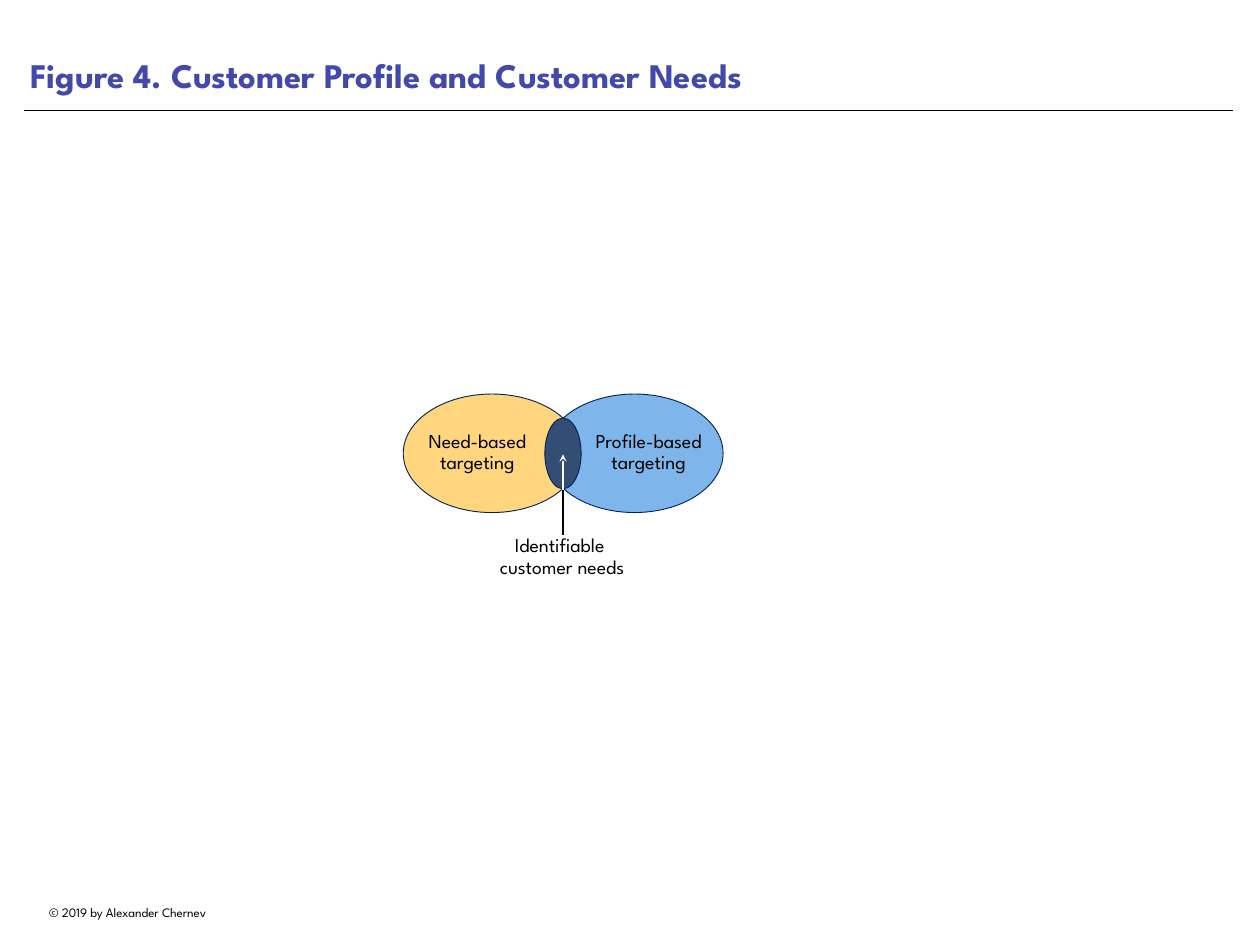
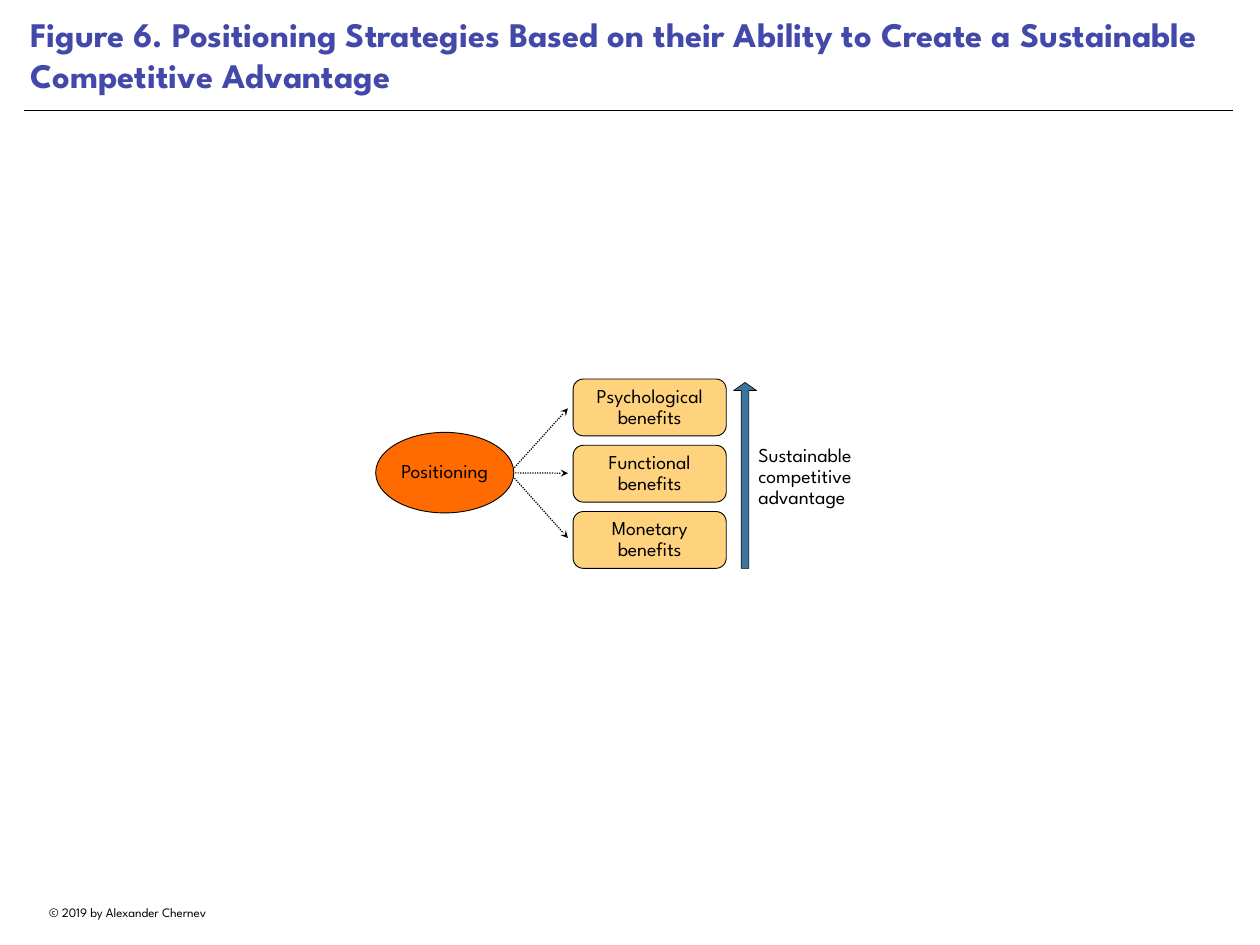
from dataclasses import dataclass

from lxml import etree
from pptx import Presentation
from pptx.dml.color import RGBColor
from pptx.enum.dml import MSO_LINE
from pptx.enum.shapes import MSO_CONNECTOR, MSO_SHAPE
from pptx.enum.text import MSO_ANCHOR, PP_ALIGN
from pptx.oxml.ns import qn
from pptx.shapes.autoshape import Shape
from pptx.slide import Slide
from pptx.util import Cm, Pt

# Enum members
STRAIGHT = MSO_CONNECTOR.STRAIGHT
OVAL, ROUNDED, UP = MSO_SHAPE.OVAL, MSO_SHAPE.ROUNDED_RECTANGLE, MSO_SHAPE.UP_ARROW
TOP, MIDDLE, BOTTOM = MSO_ANCHOR.TOP, MSO_ANCHOR.MIDDLE, MSO_ANCHOR.BOTTOM
LEFT, CENTER = PP_ALIGN.LEFT, PP_ALIGN.CENTER
DOTS = MSO_LINE.ROUND_DOT

# Shared look
FONT = "League Spartan"
BLACK = RGBColor(0x00, 0x00, 0x00)
WHITE = RGBColor(0xFF, 0xFF, 0xFF)
INDIGO = RGBColor(0x43, 0x49, 0xAA)
NAVY = RGBColor(0x00, 0x24, 0x52)
SLATE = RGBColor(0x34, 0x4D, 0x75)
SKY = RGBColor(0x7E, 0xB5, 0xEA)
STEEL = RGBColor(0x3D, 0x74, 0x9D)
YELLOW = RGBColor(0xFF, 0xD6, 0x7E)
AMBER = RGBColor(0xFF, 0xD3, 0x7D)
ORANGE = RGBColor(0xFF, 0x6B, 0x00)


@dataclass(frozen=True)
class Box:
    """A frame in centimetres."""
    left: float
    top: float
    width: float
    height: float

    def frame(self) -> tuple[Cm, Cm, Cm, Cm]:
        return Cm(self.left), Cm(self.top), Cm(self.width), Cm(self.height)


@dataclass(frozen=True)
class Style:
    """How a piece of text is set; inset is in centimetres."""
    size: float = 16
    color: RGBColor = BLACK
    bold: bool = False
    align: PP_ALIGN = CENTER
    anchor: MSO_ANCHOR = TOP
    spacing: float = 0.9
    inset: float = 0
    wrap: bool = True


LABEL = Style()
INNER = Style(anchor=MIDDLE)
PADDED = Style(anchor=MIDDLE, inset=0.15)
SIDE = Style(align=LEFT, anchor=MIDDLE)
TITLE = Style(28, INDIGO, True, LEFT, BOTTOM, 1, 0.18)
FOOTER = Style(10.5, spacing=1, inset=0.13, wrap=False)


def write(shape: Shape, text: str, style: Style) -> None:
    frame = shape.text_frame
    frame.word_wrap = style.wrap
    frame.vertical_anchor = style.anchor
    frame.margin_left = frame.margin_right = Cm(style.inset)
    frame.margin_top = frame.margin_bottom = Cm(style.inset)
    para = frame.paragraphs[0]
    para.alignment = style.align
    para.line_spacing = style.spacing
    for index, line in enumerate(text.split("\n")):
        if index:
            para.add_line_break()
        run = para.add_run()
        run.text = line
        run.font.name = FONT
        run.font.size = Pt(style.size)
        run.font.bold = style.bold
        run.font.color.rgb = style.color


def add_text(slide: Slide, box: Box, text: str, style: Style = LABEL) -> None:
    write(slide.shapes.add_textbox(*box.frame()), text, style)


def add_form(slide: Slide, kind: MSO_SHAPE, box: Box, fill: RGBColor,
             edge: RGBColor = BLACK, weight: float = 0.75) -> Shape:
    shape = slide.shapes.add_shape(kind, *box.frame())
    shape.shadow.inherit = False
    shape.fill.solid()
    shape.fill.fore_color.rgb = fill
    shape.line.color.rgb = edge
    shape.line.width = Pt(weight)
    return shape


def add_line(slide: Slide, start: tuple[float, float], end: tuple[float, float],
             weight: float, color: RGBColor = BLACK,
             arrow: bool = False, dotted: bool = False) -> None:
    line = slide.shapes.add_connector(
        STRAIGHT, Cm(start[0]), Cm(start[1]), Cm(end[0]), Cm(end[1]))
    line.line.color.rgb = color
    line.line.width = Pt(weight)
    if dotted:
        line.line.dash_style = DOTS
    if arrow:
        etree.SubElement(line.line._get_or_add_ln(), qn("a:tailEnd"), type="stealth")
    etree.SubElement(line._element.spPr, qn("a:effectLst"))


def add_page(deck: Presentation, title: str) -> Slide:
    """A blank slide with the shared footer, rule and title."""
    slide = deck.slides.add_slide(deck.slide_layouts[6])
    add_text(slide, Box(0.69, 25.81, 5.94, 0.71), "© 2019 by Alexander Chernev", FOOTER)
    add_line(slide, (0.69, 3.15), (35.36, 3.15), 0.5)
    add_text(slide, Box(0.69, 0, 34.65, 2.92), title, TITLE)
    return slide


def draw_needs(deck: Presentation) -> None:
    slide = add_page(deck, "Figure 4. Customer Profile and Customer Needs")
    axis = 16.14

    # Overlapping ovals
    for left, fill in ((11.56, YELLOW), (15.65, SKY)):
        add_form(slide, OVAL, Box(left, 11.3, 5.08, 3.4), fill, NAVY)

    # Labels
    add_text(slide, Box(11.73, 12.37, 3.91, 1.57), "Need-based targeting")
    add_text(slide, Box(16.64, 12.37, 3.91, 1.57), "Profile-based targeting")
    add_text(slide, Box(12.75, 15.37, 6.73, 1.57), "Identifiable \ncustomer needs")

    # Overlap and its pointer
    add_form(slide, OVAL, Box(axis - 0.52, 11.99, 1.04, 2.03), SLATE, NAVY)
    add_line(slide, (axis, 14.05), (axis, 13.03), 1.5, WHITE, arrow=True)
    add_line(slide, (axis, 15.34), (axis, 14.05), 1.5)


def draw_benefits(deck: Presentation) -> None:
    slide = add_page(deck, "Figure 6. Positioning Strategies Based on their Ability "
                           "to Create a Sustainable Competitive Advantage")

    # Rising advantage
    rise = add_form(slide, UP, Box(21.03, 10.97, 0.66, 5.33), STEEL, weight=0.5)
    rise.adjustments[0] = 0.33
    rise.adjustments[1] = 0.35
    add_text(slide, Box(21.74, 12.62, 3.71, 2.13),
             "Sustainable competitive advantage", SIDE)

    # Benefits, each with an arrow from the oval
    names = ("Psychological", "Functional", "Monetary")
    for index, name in enumerate(names):
        step = index - 1
        add_line(slide, (14.7, 13.56 + 0.1 * step), (16.28, 13.57 + 1.86 * step),
                 1, arrow=True, dotted=True)
        box = Box(16.43, 12.77 + 1.9 * step, 4.39, 1.63)
        card = add_form(slide, ROUNDED, box, AMBER)
        card.adjustments[0] = 0.18
        write(card, f"{name} benefits", PADDED)

    # Source of the arrows
    source = add_form(slide, OVAL, Box(10.77, 12.4, 3.96, 2.31), ORANGE)
    write(source, "Positioning", INNER)


def main() -> None:
    deck = Presentation()
    deck.slide_width, deck.slide_height = Cm(36.12), Cm(27.1)
    draw_needs(deck)
    draw_benefits(deck)
    deck.save("out.pptx")


if __name__ == "__main__":
    main()
